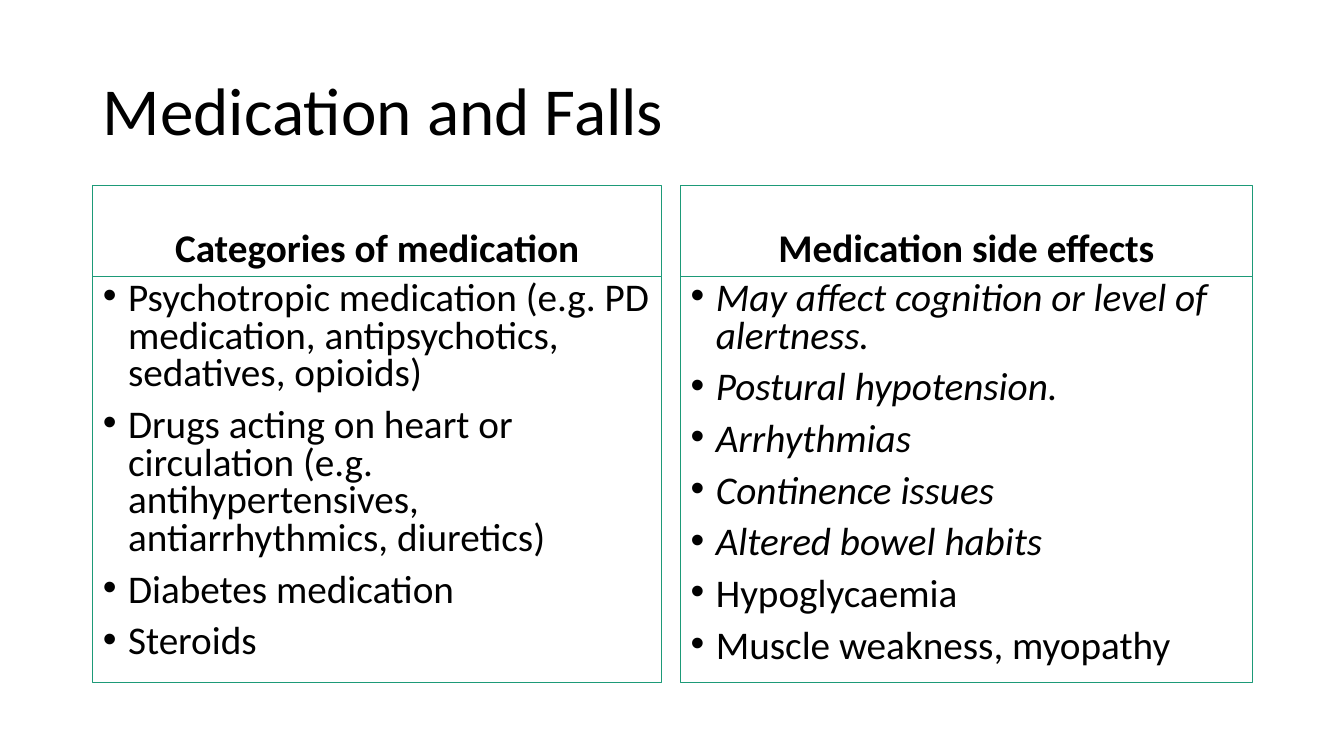
import pptx
import pptx.util
import pptx.dml.color
import pptx.enum.text
import pptx.oxml
import pptx.oxml.ns

Inches, Pt = pptx.util.Inches, pptx.util.Pt
Align, Anchor = pptx.enum.text.PP_ALIGN, pptx.enum.text.MSO_ANCHOR


def color(code):
    return pptx.dml.color.RGBColor.from_string(code)


def fill_box(box, spot, lines, size, anchor, space, bold=False, slant=0, bullet=False):
    """Place a placeholder and write its lines; the first `slant` are italic."""
    box.left, box.top, box.width, box.height = map(Inches, spot)
    frame = box.text_frame
    frame.word_wrap = True
    frame.auto_size = pptx.enum.text.MSO_AUTO_SIZE.NONE
    frame.vertical_anchor = anchor
    frame.text = "\n".join(lines)
    for i, para in enumerate(frame.paragraphs):
        para.alignment = Align.LEFT
        para.line_spacing = space
        para.space_before = Pt(10 if i else 0)
        if bullet:
            props = para._p.get_or_add_pPr()
            props.set("marL", str(Inches(0.25)))
            props.set("indent", str(Inches(-0.25)))
            for tag, key, value in (("buFont", "typeface", "Arial"), ("buChar", "char", "•")):
                mark = pptx.oxml.parse_xml(
                    f'<a:{tag} {pptx.oxml.ns.nsdecls("a")} {key}="{value}"/>')
                props.append(mark)
        font = para.font
        font.name, font.size = "Calibri", Pt(size)
        font.bold, font.italic = bold, i < slant
        font.color.rgb = color("000000")


deck = pptx.Presentation()
deck.slide_width, deck.slide_height = Inches(13.33), Inches(7.5)
slide = deck.slides.add_slide(deck.slide_layouts[4])
holders = slide.placeholders

# Title
fill_box(slide.shapes.title, (0.92, 0.4, 11.5, 1.45), ["Medication and Falls"],
         48, Anchor.MIDDLE, 0.9)

# Two columns: left, width, heading, list, count of italic lines
columns = [
    (0.92, 5.64, "Categories of medication", [
        "Psychotropic medication (e.g. PD medication, antipsychotics, sedatives, opioids)",
        "Drugs acting on heart or circulation (e.g. antihypertensives, antiarrhythmics, diuretics)",
        "Diabetes medication",
        "Steroids",
    ], 0),
    (6.75, 5.67, "Medication side effects", [
        "May affect cognition or level of alertness.",
        "Postural hypotension.",
        "Arrhythmias",
        "Continence issues",
        "Altered bowel habits",
        "Hypoglycaemia",
        "Muscle weakness, myopathy",
    ], 5),
]
for n, (left, width, heading, items, slant) in enumerate(columns):
    head, body = holders[2 * n + 1], holders[2 * n + 2]
    fill_box(head, (left, 1.84, width, 0.9), [heading], 28, Anchor.BOTTOM, 0.9, bold=True)
    head.text_frame.paragraphs[0].alignment = Align.CENTER
    fill_box(body, (left, 2.74, width, 4.03), items, 28, Anchor.TOP, 0.8,
             slant=slant, bullet=True)
    body.fill.solid()
    body.fill.fore_color.rgb = color("FFFFFF")
    for box, weight in ((head, 0.75), (body, 1)):
        box.line.color.rgb = color("1D9A78")
        box.line.width = Pt(weight)

deck.save("out.pptx")
